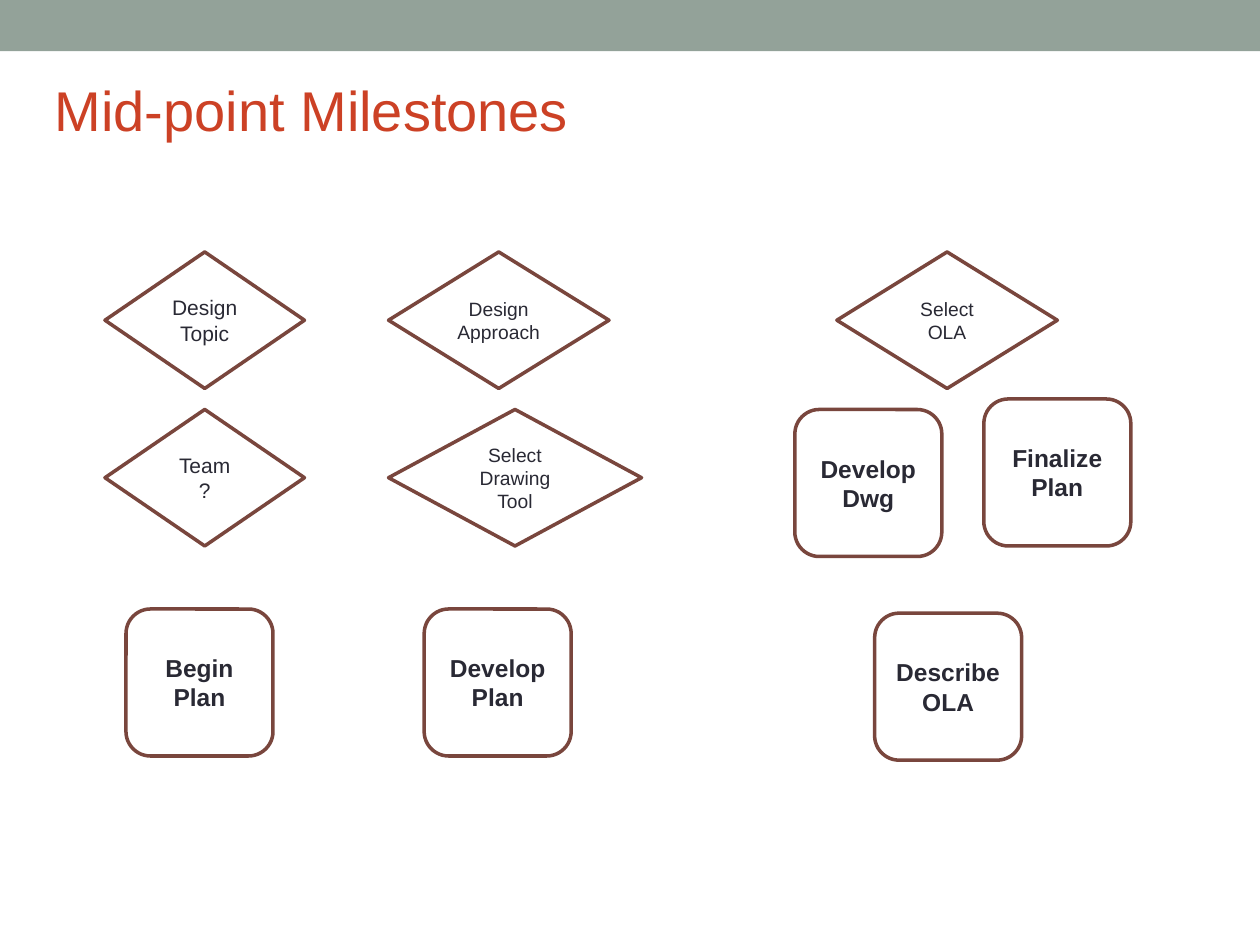
from collections import namedtuple
from dataclasses import dataclass

from pptx import Presentation
from pptx.dml.color import RGBColor
from pptx.enum.shapes import MSO_SHAPE
from pptx.enum.text import MSO_ANCHOR, MSO_AUTO_SIZE, PP_ALIGN
from pptx.util import Inches, Pt

BAND = MSO_SHAPE.RECTANGLE
DECISION = MSO_SHAPE.FLOWCHART_DECISION
TASK = MSO_SHAPE.ROUNDED_RECTANGLE
LEFT, CENTER = PP_ALIGN.LEFT, PP_ALIGN.CENTER
MIDDLE = MSO_ANCHOR.MIDDLE
NO_FIT = MSO_AUTO_SIZE.NONE

COLUMNS, ROWS = 120, 90
UNIT = Inches(10) / COLUMNS
TASK_SIDE = 14
DECISION_HEIGHT = 13

Box = namedtuple("Box", "left top width height")
Step = namedtuple("Step", "kind text column row width size")


@dataclass(frozen=True)
class Theme:
    font: str = "Arial"
    band: str = "93A299"
    title: str = "CC4125"
    ink: str = "292934"
    paper: str = "FFFFFF"
    outline: str = "79463D"
    outline_width: float = 2
    title_size: float = 32
    large: float = 14
    medium: float = 12
    small: float = 11


THEME = Theme()


def decision(text, column, row, width, size=THEME.small):
    return Step(DECISION, text, column, row, width, size)


def task(text, column, row):
    return Step(TASK, text, column, row, TASK_SIDE, THEME.large)


STAGES = [
    (Box(10, 24, 19, 48), [
        decision("Design Topic", 0, 0, 19, THEME.medium),
        decision("Team\n?", 0, 15, 19, THEME.medium),
        task("Begin\nPlan", 2, 34),
    ]),
    (Box(37, 24, 24.1, 48), [
        decision("Design Approach", 0, 0, 21),
        decision("Select Drawing Tool", 0, 15, 24.1),
        task("Develop\nPlan", 3.4, 34),
    ]),
    (Box(75.7, 24, 32, 48.4), [
        decision("Select\nOLA", 4, 0, 21),
        task("Finalize\nPlan", 18, 14),
        task("Describe\nOLA", 7.6, 34.4),
        task("Develop\nDwg", 0, 15),
    ]),
]


def grid(value):
    return round(value * UNIT)


def write(shape, text, size, color, bold=False, align=CENTER):
    frame = shape.text_frame
    frame.word_wrap = True
    frame.auto_size = NO_FIT
    frame.vertical_anchor = MIDDLE
    frame.margin_left = frame.margin_right = Inches(0.1)
    frame.margin_top = frame.margin_bottom = Inches(0.05)
    for index, line in enumerate(text.split("\n")):
        para = frame.paragraphs[0] if index == 0 else frame.add_paragraph()
        para.alignment = align
        span = para.add_run()
        span.text = line
        span.font.name = THEME.font
        span.font.size = Pt(size)
        span.font.bold = bold
        span.font.color.rgb = RGBColor.from_string(color)


def add_block(page, kind, box, fill, outline=None):
    shape = page.shapes.add_shape(kind, *map(grid, box))
    shape.shadow.inherit = False
    shape.fill.solid()
    shape.fill.fore_color.rgb = RGBColor.from_string(fill)
    if outline:
        shape.line.color.rgb = RGBColor.from_string(outline)
        shape.line.width = Pt(THEME.outline_width)
    else:
        shape.line.fill.background()
    return shape


def draw_header(page, box):
    add_block(page, BAND, box._replace(height=box.height * 0.29), THEME.band)
    title = page.shapes.title
    title.left, title.top = grid(box.left + 4), grid(box.top + 3.9)
    title.width, title.height = grid(52.3), grid(box.height - 3.9)
    write(title, "Mid-point Milestones", THEME.title_size, THEME.title, align=LEFT)


def draw_stage(page, box, steps):
    for step in steps:
        height = TASK_SIDE if step.kind == TASK else DECISION_HEIGHT
        place = Box(box.left + step.column, box.top + step.row, step.width, height)
        shape = add_block(page, step.kind, place, THEME.paper, THEME.outline)
        write(shape, step.text, step.size, THEME.ink, bold=step.kind == TASK)


def main():
    deck = Presentation()
    deck.slide_width, deck.slide_height = grid(COLUMNS), grid(ROWS)
    page = deck.slides.add_slide(deck.slide_layouts[5])
    draw_header(page, Box(0, 0, COLUMNS, 16.8))
    for box, steps in STAGES:
        draw_stage(page, box, steps)
    deck.save("out.pptx")


if __name__ == "__main__":
    main()
